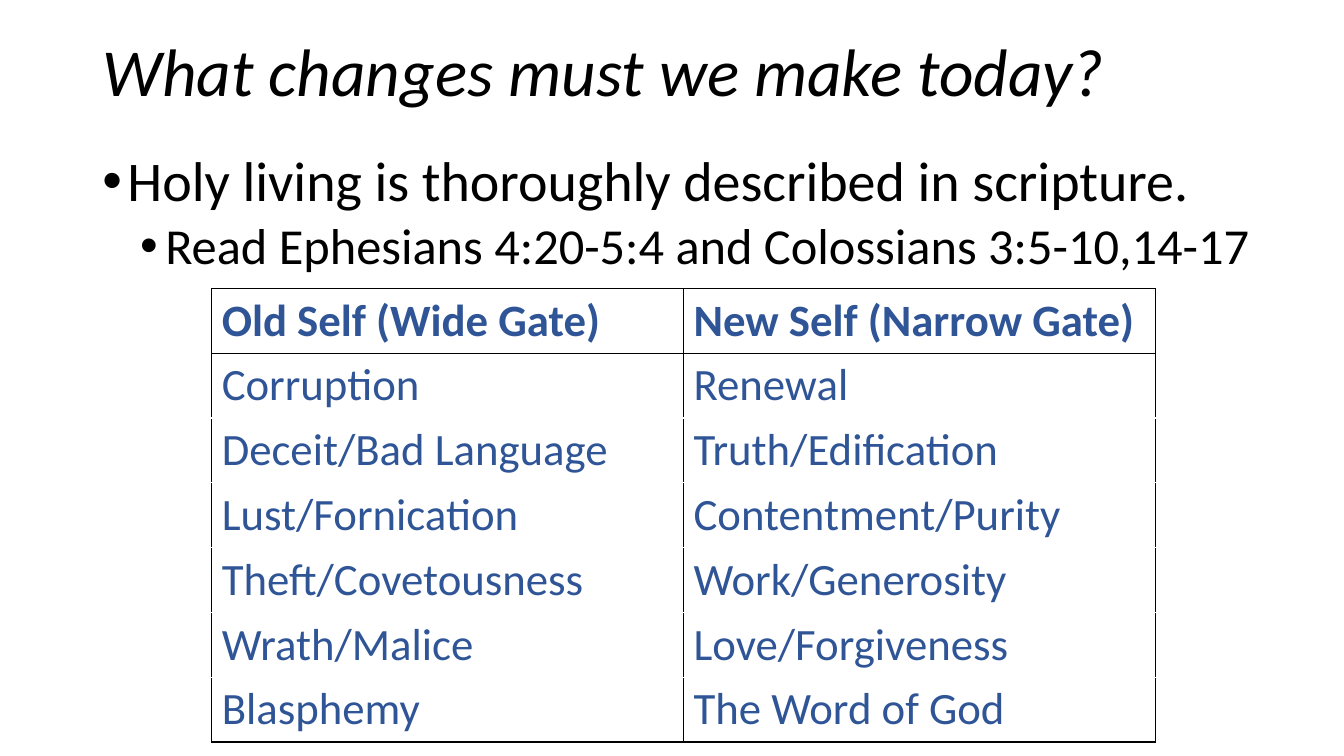
from lxml.etree import SubElement
from pptx import Presentation
from pptx.dml.color import RGBColor
from pptx.enum.text import MSO_ANCHOR, MSO_AUTO_SIZE, PP_ALIGN
from pptx.oxml.ns import qn
from pptx.util import Pt

TITLE = "What changes must we make today?"
# text, size, left margin, space before
POINTS = [
    ("Holy living is thoroughly described in scripture.", 40, 18, 10),
    ("Read Ephesians 4:20-5:4 and Colossians 3:5-10,14-17", 36, 45, 5),
]
SELVES = [
    ("Old Self (Wide Gate)", "New Self (Narrow Gate)"),
    ("Corruption", "Renewal"),
    ("Deceit/Bad Language", "Truth/Edification"),
    ("Lust/Fornication", "Contentment/Purity"),
    ("Theft/Covetousness", "Work/Generosity"),
    ("Wrath/Malice", "Love/Forgiveness"),
    ("Blasphemy", "The Word of God"),
]
COLORS = {"text": "000000", "table": "2F5597", "line": "000000", "hidden": "FFFFFF"}
FONT = "Calibri"
HANGING = 18
COLUMN_WIDTH, ROW_HEIGHT = 337, 46.3


def format_runs(paragraph, size, color, bold=False, italic=False):
    for run in paragraph.runs:
        font = run.font
        font.name, font.size = FONT, Pt(size)
        font.bold, font.italic = bold, italic
        font.color.rgb = RGBColor.from_string(COLORS[color])


def add_bullet(paragraph, margin):
    properties = paragraph._p.get_or_add_pPr()
    properties.set("marL", str(Pt(margin)))
    properties.set("indent", str(-Pt(HANGING)))
    SubElement(properties, qn("a:buFont"), typeface="Arial")
    SubElement(properties, qn("a:buChar"), char="•")


def set_borders(cell, top, bottom):
    properties = cell._tc.get_or_add_tcPr()
    sides = {"lnL": "line", "lnR": "line", "lnT": top, "lnB": bottom}
    for side, color in sides.items():
        border = SubElement(properties, qn(f"a:{side}"), w=str(Pt(1)))
        fill = SubElement(border, qn("a:solidFill"))
        SubElement(fill, qn("a:srgbClr"), val=COLORS[color])


presentation = Presentation()
presentation.slide_width, presentation.slide_height = Pt(960), Pt(540)
slide = presentation.slides.add_slide(presentation.slide_layouts[5])

# Title
title = slide.shapes.title
title.left, title.top, title.width, title.height = Pt(66), Pt(1.5), Pt(856), Pt(104.4)
title_frame = title.text_frame
title_frame.text = TITLE
title_frame.auto_size = MSO_AUTO_SIZE.NONE
title_frame.vertical_anchor = MSO_ANCHOR.MIDDLE
heading = title_frame.paragraphs[0]
heading.alignment, heading.line_spacing = PP_ALIGN.LEFT, 0.9
format_runs(heading, 48, "text", italic=True)

# Bulleted points
points_frame = slide.shapes.add_textbox(Pt(66), Pt(106), Pt(837), Pt(100)).text_frame
points_frame.word_wrap = True
points_frame.text = "\n".join(point[0] for point in POINTS)
for paragraph, (_, size, margin, space) in zip(points_frame.paragraphs, POINTS):
    paragraph.line_spacing, paragraph.space_before = 0.9, Pt(space)
    add_bullet(paragraph, margin)
    format_runs(paragraph, size, "text")

# Comparison of the two selves
last = len(SELVES) - 1
comparison = slide.shapes.add_table(
    len(SELVES), 2, Pt(151.2), Pt(206), Pt(2 * COLUMN_WIDTH), Pt(len(SELVES) * ROW_HEIGHT)
).table
comparison.first_row = comparison.horz_banding = False
for row_index, selves in enumerate(SELVES):
    comparison.rows[row_index].height = Pt(ROW_HEIGHT)
    top = "line" if row_index <= 1 else "hidden"
    bottom = "line" if row_index in (0, last) else "hidden"
    for column_index, wording in enumerate(selves):
        cell = comparison.cell(row_index, column_index)
        cell.text = wording
        format_runs(cell.text_frame.paragraphs[0], 32, "table", bold=row_index == 0)
        set_borders(cell, top, bottom)
        cell.fill.background()

presentation.save("out.pptx")
